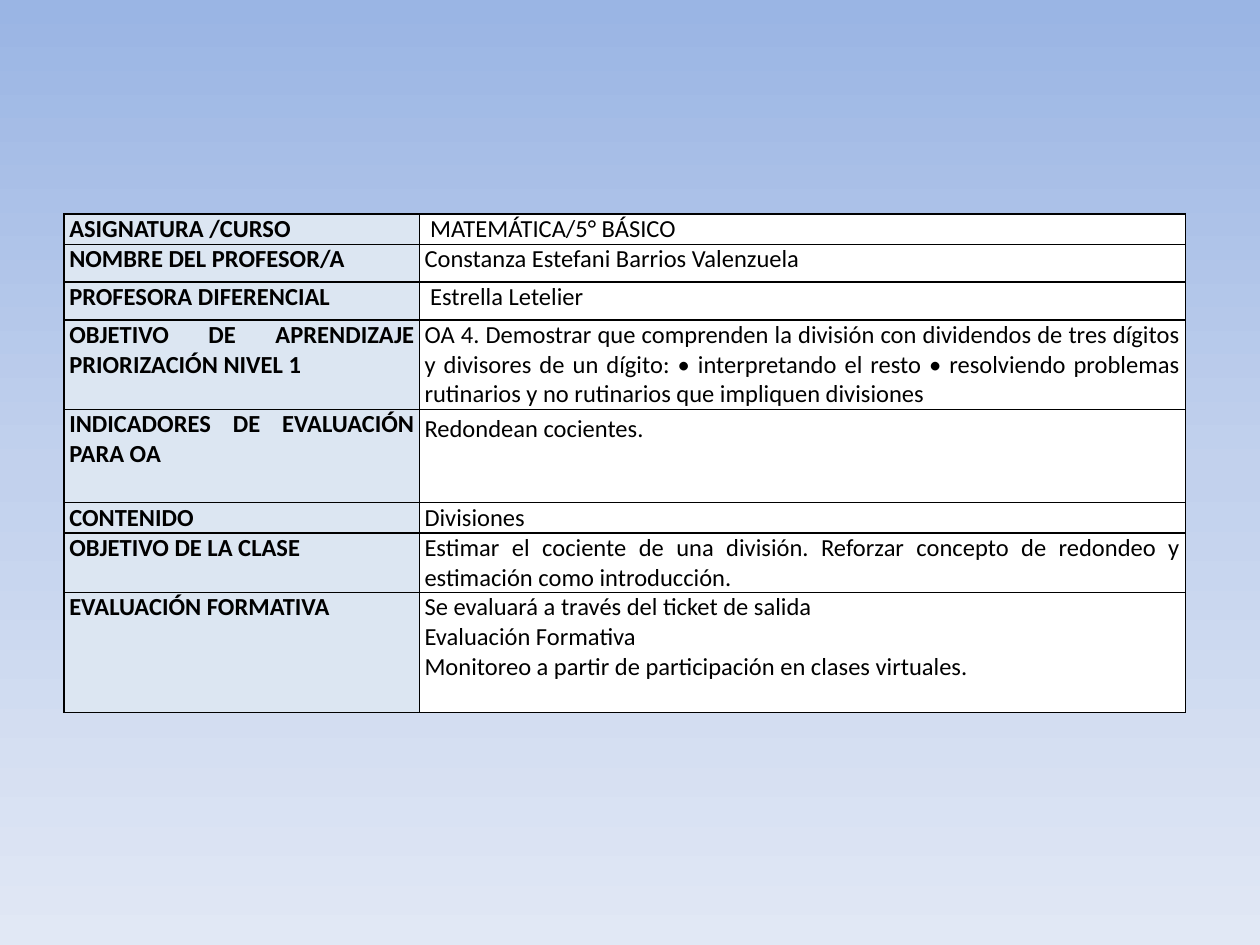
from copy import deepcopy

from lxml import etree
from pptx import Presentation
from pptx import util as u
from pptx.dml.color import RGBColor
from pptx.enum import text
from pptx.oxml.ns import qn

COLORS = {
    "ink": "000000",
    "label": "DCE6F2",
    "value": "FFFFFF",
    "sky_top": "9AB5E4",
    "sky_middle": "C2D1ED",
    "sky_bottom": "E1E8F5",
}

JUSTIFY = text.PP_ALIGN.JUSTIFY
LEFT = text.PP_ALIGN.LEFT

# Label, value, row height in inches, format of the value
ROWS = [
    ("ASIGNATURA /CURSO", " MATEMÁTICA/5° BÁSICO", 0.24, {}),
    ("NOMBRE DEL PROFESOR/A", "Constanza Estefani Barrios Valenzuela", 0.3, {}),
    ("PROFESORA DIFERENCIAL", " Estrella Letelier", 0.3, {}),
    ("OBJETIVO DE APRENDIZAJE PRIORIZACIÓN NIVEL 1",
     "OA 4. Demostrar que comprenden la división con dividendos de tres dígitos "
     "y divisores de un dígito: • interpretando el resto • resolviendo problemas "
     "rutinarios y no rutinarios que impliquen divisiones", 0.71, {}),
    ("INDICADORES DE EVALUACIÓN PARA OA", "Redondean cocientes.", 0.74,
     {"align": LEFT, "spacing": 1.15}),
    ("CONTENIDO", "Divisiones", 0.24, {}),
    ("OBJETIVO DE LA CLASE",
     "Estimar el cociente de una división. Reforzar concepto de redondeo y "
     "estimación como introducción.", 0.47, {}),
    ("EVALUACIÓN FORMATIVA",
     "Se evaluará a través del ticket de salida\n"
     "Evaluación Formativa\n"
     "Monitoreo a partir de participación en clases virtuales.", 0.95, {}),
]


def write_text(frame, content, bold=False, align=JUSTIFY, spacing=None,
               size=14, font="Calibri", color="ink"):
    """Fill a text frame, one paragraph per line of content."""
    frame.text = content
    for paragraph in frame.paragraphs:
        paragraph.alignment = align
        if spacing:
            paragraph.line_spacing = spacing
        for run in paragraph.runs:
            run.font.name = font
            run.font.size = u.Pt(size)
            run.font.bold = bold
            run.font.color.rgb = RGBColor.from_string(COLORS[color])


class LessonSlide:
    side_inset = u.Inches(0.04)
    border = u.Pt(1)

    def __init__(self, presentation):
        blank = presentation.slide_layouts[6]
        self.slide = presentation.slides.add_slide(blank)

    def background(self, *names):
        """Vertical gradient with evenly spaced stops."""
        fill = self.slide.background.fill
        fill.gradient()
        fill.gradient_angle = 270
        stop_list = self.slide.element.find(".//" + qn("a:gsLst"))
        while len(stop_list) < len(names):
            stop_list.append(deepcopy(stop_list[0]))
        for i, (stop, name) in enumerate(zip(fill.gradient_stops, names)):
            stop.color.rgb = RGBColor.from_string(COLORS[name])
            stop.color.brightness = 0
            stop.position = i / (len(names) - 1)

    def cell(self, cell, content, fill, **text_format):
        cell.margin_left = cell.margin_right = self.side_inset
        cell.margin_top = cell.margin_bottom = 0
        cell.fill.solid()
        cell.fill.fore_color.rgb = RGBColor.from_string(COLORS[fill])
        self.cell_borders(cell)
        write_text(cell.text_frame, content, **text_format)

    def cell_borders(self, cell):
        properties = cell._tc.get_or_add_tcPr()
        for i, side in enumerate(("lnL", "lnR", "lnT", "lnB")):
            line = etree.Element(qn(f"a:{side}"), w=str(self.border))
            solid = etree.SubElement(line, qn("a:solidFill"))
            etree.SubElement(solid, qn("a:srgbClr"), val=COLORS["ink"])
            properties.insert(i, line)

    def table(self, rows, left, top, widths):
        height = sum(row[2] for row in rows)
        table = self.slide.shapes.add_table(
            len(rows), len(widths), u.Inches(left), u.Inches(top),
            u.Inches(sum(widths)), u.Inches(height)).table
        for column, width in zip(table.columns, widths):
            column.width = u.Inches(width)
        for i, (label, value, row_height, value_format) in enumerate(rows):
            table.rows[i].height = u.Inches(row_height)
            self.cell(table.cell(i, 0), label, "label", bold=True)
            self.cell(table.cell(i, 1), value, "value", **value_format)


def main():
    presentation = Presentation()
    presentation.slide_width = u.Inches(10)
    presentation.slide_height = u.Inches(7.5)

    lesson = LessonSlide(presentation)
    lesson.background("sky_top", "sky_middle", "sky_bottom")
    lesson.table(ROWS, left=0.51, top=1.7, widths=(2.82, 6.08))

    presentation.save("out.pptx")


if __name__ == "__main__":
    main()
